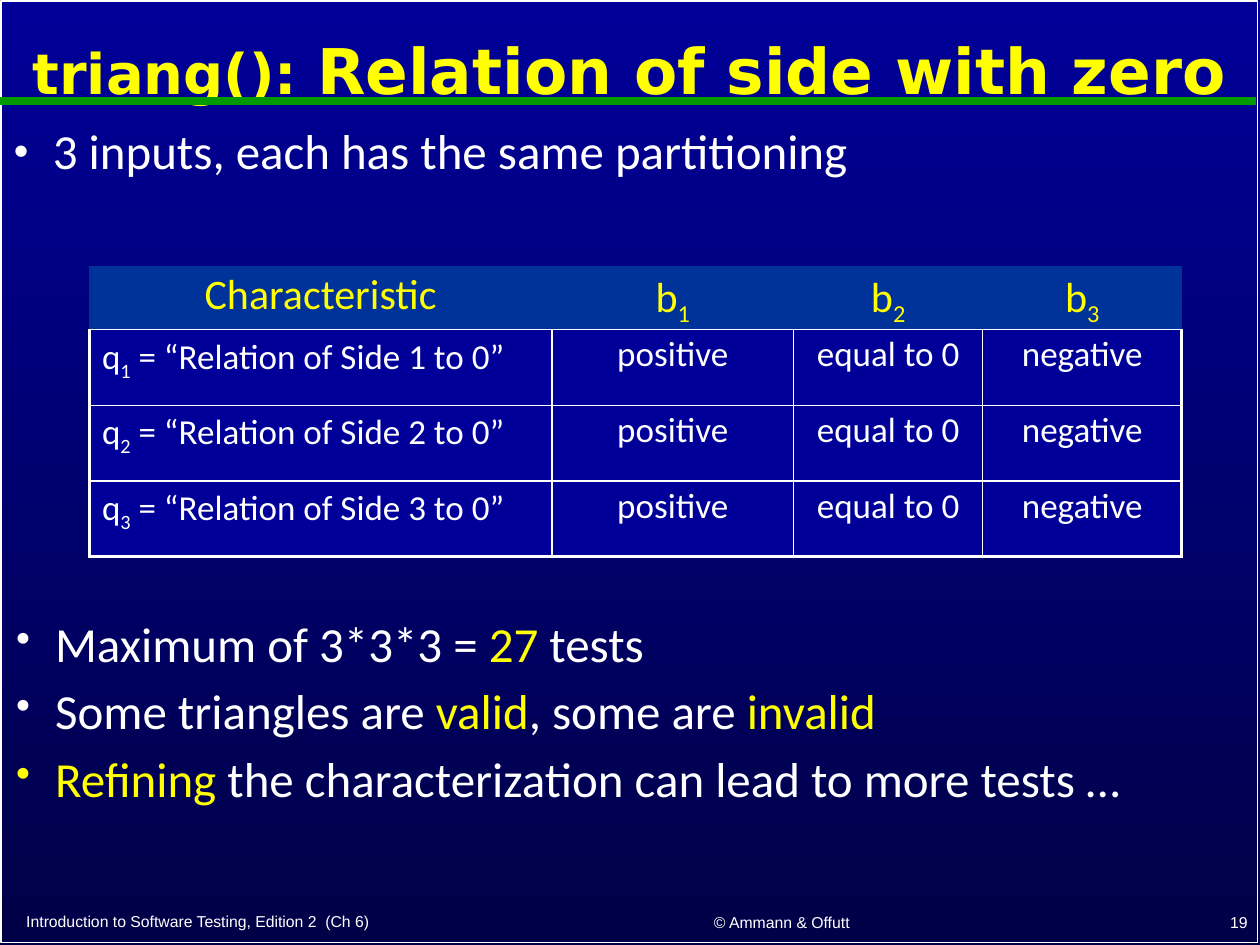
import dataclasses

import lxml.etree
import pptx
import pptx.dml.color
import pptx.enum.dml
import pptx.enum.shapes
import pptx.enum.text
import pptx.oxml.ns
import pptx.util

Inches, Pt = pptx.util.Inches, pptx.util.Pt
ALIGN = pptx.enum.text.PP_ALIGN
ANCHOR = pptx.enum.text.MSO_ANCHOR


@dataclasses.dataclass(frozen=True)
class Theme:
    white: str = "FFFFFF"
    yellow: str = "FFFF00"
    green: str = "009900"
    navy_top: str = "000099"
    navy_bottom: str = "000047"
    header_fill: str = "003399"
    title_font: str = "DejaVu Sans"
    body_font: str = "Calibri"
    footer_font: str = "Arial"
    title_size: int = 36
    code_size: int = 32
    list_size: int = 28
    header_size: int = 24
    cell_size: int = 20
    footer_size: int = 9


THEME = Theme()


def rgb(color):
    return pptx.dml.color.RGBColor.from_string(color)


def add_xml(parent, tag, **attributes):
    child = lxml.etree.SubElement(parent, pptx.oxml.ns.qn(tag))
    for key, value in attributes.items():
        child.set(key, str(value))
    return child


def set_attributes(target, values):
    for key, value in values.items():
        setattr(target, key, value)


def place(part, box):
    names = ("left", "top", "width", "height")
    set_attributes(part, {name: Inches(length) for name, length in zip(names, box)})


def write_runs(paragraph, runs, font, size, color):
    """Each run is a text, or a text with a dict of its own format."""
    for entry in runs:
        text, own = (entry, {}) if isinstance(entry, str) else entry
        run = paragraph.add_run()
        run.text = text
        set_attributes(run.font, {"name": font, "size": Pt(own.get("size", size)),
                                  "bold": own.get("bold", False)})
        run.font.color.rgb = rgb(own.get("color", color))
        if own.get("sub"):
            run.font._element.set("baseline", "-25000")


def space_lines(paragraph):
    """90 % line spacing with a gap of 30 % of a line above."""
    paragraph.line_spacing = 0.9
    paragraph.space_before = Pt(0)
    gap = paragraph._p.pPr.find(pptx.oxml.ns.qn("a:spcBef"))
    gap.remove(gap[0])
    add_xml(gap, "a:spcPct", val=30000)


def fill_list(part, box, items):
    place(part, box)
    frame = part.text_frame
    set_attributes(frame, {"word_wrap": True, "vertical_anchor": ANCHOR.TOP,
                           "auto_size": pptx.enum.text.MSO_AUTO_SIZE.NONE})
    for index, runs in enumerate(items):
        paragraph = frame.add_paragraph() if index else frame.paragraphs[0]
        space_lines(paragraph)
        properties = paragraph._p.pPr
        properties.set("marL", str(Inches(0.31)))
        properties.set("indent", str(-Inches(0.31)))
        add_xml(properties, "a:buSzPct", val=85000)
        add_xml(properties, "a:buChar", char="•")
        write_runs(paragraph, runs, THEME.body_font, THEME.list_size, THEME.white)


def add_backdrop(slide, box):
    """Gradient, thin frame and the green rule below the title."""
    fill = slide.background.fill
    fill.gradient()
    fill.gradient_angle = 270
    for stop, color in zip(fill.gradient_stops, (THEME.navy_top, THEME.navy_bottom)):
        stop.color.rgb = rgb(color)

    border = slide.shapes.add_shape(
        pptx.enum.shapes.MSO_SHAPE.RECTANGLE, *map(Inches, box))
    border.shadow.inherit = False
    border.fill.background()
    border.line.color.rgb = rgb(THEME.white)
    border.line.width = Pt(1)

    rule = slide.shapes.add_connector(
        pptx.enum.shapes.MSO_CONNECTOR.STRAIGHT,
        Inches(0), Inches(0.8), Inches(box[2]), Inches(0.8))
    rule.line.color.rgb = rgb(THEME.green)
    rule.line.width = Pt(4.5)
    add_xml(rule._element.spPr, "a:effectLst")


def fill_title(title, box, runs):
    place(title, box)
    set_attributes(title.text_frame, {
        "word_wrap": True, "vertical_anchor": ANCHOR.MIDDLE,
        "auto_size": pptx.enum.text.MSO_AUTO_SIZE.NONE})
    paragraph = title.text_frame.paragraphs[0]
    set_attributes(paragraph, {"alignment": ALIGN.CENTER, "line_spacing": 0.9})
    write_runs(paragraph, runs, THEME.title_font, THEME.title_size, THEME.yellow)


def set_borders(cell, widths):
    """Widths in points for left, right, top and bottom; 0 hides an edge."""
    properties = cell._tc.get_or_add_tcPr()
    for side, width in zip("LRTB", widths):
        edge = add_xml(properties, f"a:ln{side}", w=Pt(width))
        if width:
            add_xml(add_xml(edge, "a:solidFill"), "a:srgbClr", val=THEME.white)
        else:
            add_xml(edge, "a:noFill")


def add_partition_table(slide, box, columns, heights):
    subscript = {"sub": True}
    rows = [[["Characteristic"]] + [["b", (str(n), subscript)] for n in (1, 2, 3)]]
    for n in (1, 2, 3):
        rows.append([["q", (str(n), subscript), f" = “Relation of Side {n} to 0”"],
                     ["positive"], ["equal to 0"], ["negative"]])

    table = slide.shapes.add_table(len(rows), len(columns), *map(Inches, box)).table
    set_attributes(table, {"first_row": False, "horz_banding": False})
    for column, width in zip(table.columns, columns):
        column.width = Inches(width)
    for row, height in zip(table.rows, heights):
        row.height = Inches(height)

    last_row, last_column = len(rows) - 1, len(columns) - 1
    for r, row in enumerate(rows):
        for c, runs in enumerate(row):
            cell = table.cell(r, c)
            header = r == 0
            set_borders(cell, (0, 0, 0, 1) if header else (
                2.25 if c == 0 else 1, 2.25 if c == last_column else 1,
                1, 2.25 if r == last_row else 1))
            cell.fill.solid()
            cell.fill.fore_color.rgb = rgb(
                THEME.header_fill if header else THEME.navy_top)
            paragraph = cell.text_frame.paragraphs[0]
            paragraph.alignment = ALIGN.CENTER if header or c else ALIGN.LEFT
            space_lines(paragraph)
            write_runs(paragraph, runs, THEME.body_font,
                       THEME.header_size if header else THEME.cell_size,
                       THEME.yellow if header else THEME.white)


def add_footer(slide, box, text, alignment):
    footer = slide.shapes.add_textbox(*map(Inches, box))
    set_attributes(footer.text_frame, {"word_wrap": False,
                                       "vertical_anchor": ANCHOR.BOTTOM})
    paragraph = footer.text_frame.paragraphs[0]
    paragraph.alignment = alignment
    write_runs(paragraph, [text], THEME.footer_font, THEME.footer_size, THEME.white)


def main():
    deck = pptx.Presentation()
    set_attributes(deck, {"slide_width": Inches(10), "slide_height": Inches(7.5)})
    slide = deck.slides.add_slide(deck.slide_layouts[1])
    accent = {"color": THEME.yellow}

    add_backdrop(slide, (0.01, 0.01, 9.97, 7.47))
    fill_title(slide.shapes.title, (0.01, 0.11, 9.97, 0.95), [
        ("triang(): ", {"size": THEME.code_size, "bold": True}),
        ("Relation of side with zero", {"bold": True})])
    fill_list(slide.placeholders[1], (0.01, 0.96, 9.97, 0.78),
              [["3 inputs, each has the same partitioning"]])
    add_partition_table(slide, (0.71, 2.11, 8.67, 2.3),
                        (3.67, 1.92, 1.5, 1.58), (0.5, 0.6, 0.6, 0.6))
    conclusions = slide.shapes.add_textbox(0, 0, 0, 0)
    fill_list(conclusions, (0.03, 4.87, 9.97, 2.02), [
        ["Maximum of 3*3*3 = ", ("27", accent), " tests"],
        ["Some triangles are ", ("valid", accent), ", some are ", ("invalid", accent)],
        [("Refining", accent), " the characterization can lead to more tests …"]])

    # Footer line
    add_footer(slide, (0.11, 7.18, 4.31, 0.26),
               "Introduction to Software Testing, Edition 2  (Ch 6)", ALIGN.LEFT)
    add_footer(slide, (4.62, 7.17, 3.17, 0.27), "© Ammann & Offutt", ALIGN.CENTER)
    add_footer(slide, (7.92, 7.16, 2.08, 0.28), "19", ALIGN.RIGHT)
    deck.save("out.pptx")


if __name__ == "__main__":
    main()
